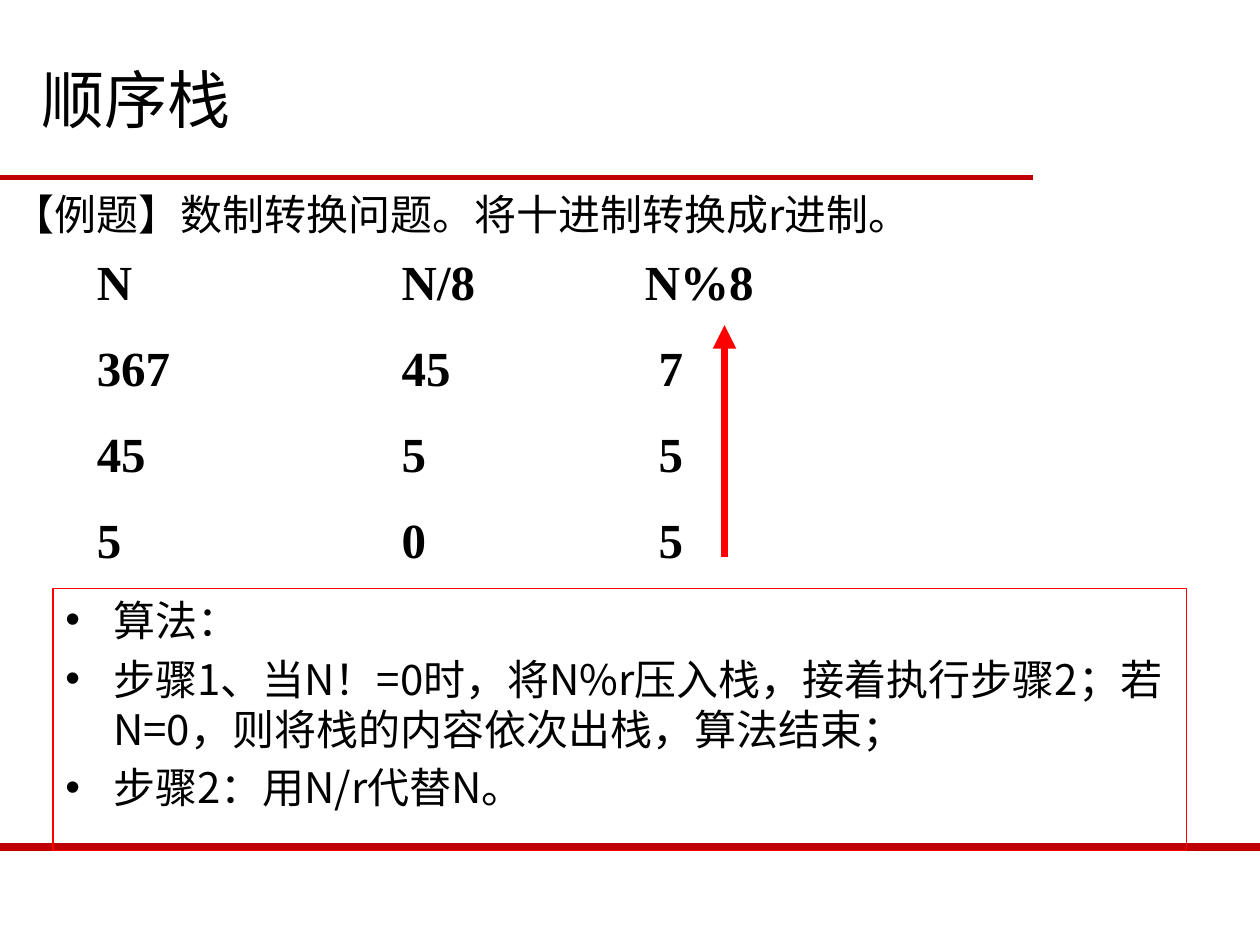
from lxml import etree
from pptx import Presentation
from pptx.dml.color import RGBColor
from pptx.enum.shapes import MSO_CONNECTOR, MSO_SHAPE
from pptx.enum.text import MSO_ANCHOR, PP_ALIGN
from pptx.oxml.ns import qn
from pptx.util import Inches, Pt

LINE = MSO_CONNECTOR.STRAIGHT
RECT = MSO_SHAPE.RECTANGLE
TOP, MIDDLE = MSO_ANCHOR.TOP, MSO_ANCHOR.MIDDLE
LEFT = PP_ALIGN.LEFT

SANS, SERIF = "Noto Sans CJK SC", "Times New Roman"
BLACK, RED, DARK = "000000", "FF0000", "C00000"

ROWS = [("N", "N/8", "N%8"), (367, 45, 7), (45, 5, 5), (5, 0, 5)]
STEPS = [
    "算法：",
    "步骤1、当N！=0时，将N%r压入栈，接着执行步骤2；若N=0，则将栈的内容依次出栈，算法结束；",
    "步骤2：用N/r代替N。",
]


def color(value):
    return RGBColor.from_string(value)


def add_node(parent, tag, **attrs):
    return etree.SubElement(parent, qn(tag), {k: str(v) for k, v in attrs.items()})


def add_line(slide, start, end, tint, width, arrow=False):
    line = slide.shapes.add_connector(LINE, *map(Inches, start + end))
    line.line.color.rgb = color(tint)
    line.line.width = Pt(width)
    if arrow:
        add_node(line.line._get_or_add_ln(), "a:tailEnd", type="triangle")
    add_node(line._element.spPr, "a:effectLst")


def add_box(slide, area):
    return slide.shapes.add_textbox(*map(Inches, area))


def add_frame(slide, area, tint):
    box = slide.shapes.add_shape(RECT, *map(Inches, area))
    box.shadow.inherit = False
    box.fill.background()
    box.line.color.rgb = color(tint)
    box.line.width = Pt(0.75)
    return box


def set_bullet(para):
    props = para._p.get_or_add_pPr()
    props.set("marL", str(Inches(0.38)))
    props.set("indent", str(-Inches(0.38)))
    add_node(props, "a:buFont", typeface="Arial")
    add_node(props, "a:buChar", char="•")


def set_tabs(para, stops):
    tabs = add_node(para._p.get_or_add_pPr(), "a:tabLst")
    for stop in stops:
        add_node(tabs, "a:tab", pos=Inches(stop), algn="l")


def write(box, lines, size, face=SANS, bold=False, gap=0, pitch=None,
          anchor=TOP, bullet=False, stops=None):
    """Fill a box with one paragraph per line; stops holds tabs for each line."""
    frame = box.text_frame
    frame.word_wrap = True
    frame.vertical_anchor = anchor
    form = {"name": face, "size": Pt(size), "bold": bold}
    for i, line in enumerate(lines):
        para = frame.add_paragraph() if i else frame.paragraphs[0]
        if bullet:
            set_bullet(para)
        if stops:
            set_tabs(para, stops[i])
        para.alignment = LEFT
        para.space_before = Pt(gap if i else 0)
        if pitch:
            para.line_spacing = Pt(pitch)
        run = para.add_run()
        run.text = line
        for key, value in form.items():
            setattr(run.font, key, value)
        run.font.color.rgb = color(BLACK)
        add_node(run._r.get_or_add_rPr(), "a:ea", typeface=face)


def main():
    deck = Presentation()
    deck.slide_width, deck.slide_height = Inches(10), Inches(7.5)
    slide = deck.slides.add_slide(deck.slide_layouts[6])

    add_line(slide, (0, 1.41), (8.2, 1.41), DARK, 3)
    add_line(slide, (0, 6.72), (10, 6.72), DARK, 4.5)
    write(add_box(slide, (0.23, 0.39, 6.5, 0.78)), ["顺序栈"], 36, anchor=MIDDLE)
    write(add_box(slide, (0, 1.45, 10, 0.5)),
          ["【例题】数制转换问题。将十进制转换成r进制。"], 24, pitch=28.6)

    rows = ["\t".join(map(str, row)) for row in ROWS]
    stops = [(2.42, 4.35)] + [(2.42, 4.46)] * (len(ROWS) - 1)
    write(add_box(slide, (0.67, 1.95, 5.83, 2.67)), rows, 28,
          face=SERIF, bold=True, gap=15.4, stops=stops)
    add_line(slide, (5.75, 4.42), (5.75, 2.58), RED, 4.5, arrow=True)

    write(add_frame(slide, (0.42, 4.67, 9, 2.08), RED), STEPS, 24,
          gap=5, pitch=28.6, bullet=True)
    deck.save("out.pptx")


if __name__ == "__main__":
    main()
